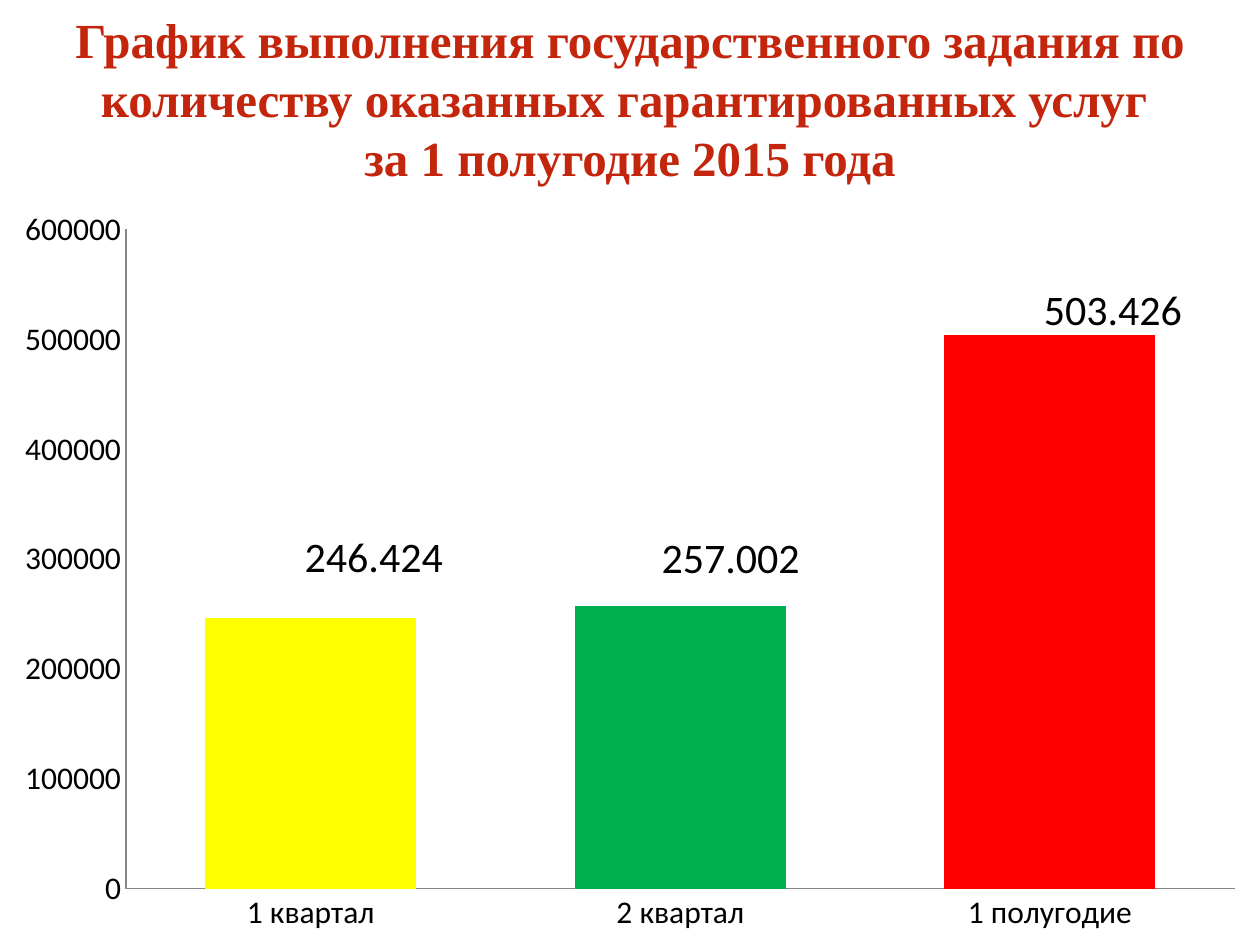
from dataclasses import dataclass

from lxml.etree import SubElement
from pptx import Presentation
from pptx.chart.data import CategoryChartData
from pptx.dml.color import RGBColor
from pptx.enum.chart import XL_CHART_TYPE, XL_TICK_MARK
from pptx.enum.text import MSO_ANCHOR, PP_ALIGN
from pptx.oxml.ns import qn
from pptx.util import Pt


@dataclass(frozen=True)
class Theme:
    """Colours, fonts and type sizes of the slide."""
    heading: RGBColor = RGBColor(0xC3, 0x26, 0x0C)
    text: RGBColor = RGBColor(0, 0, 0)
    axis: RGBColor = RGBColor(0x86, 0x86, 0x86)
    yellow: RGBColor = RGBColor(0xFF, 0xFF, 0)
    green: RGBColor = RGBColor(0, 0xB0, 0x50)
    red: RGBColor = RGBColor(0xFF, 0, 0)
    heading_font: str = "Times New Roman"
    chart_font: str = "Calibri"
    heading_size: Pt = Pt(28)
    axis_size: Pt = Pt(18)
    value_size: Pt = Pt(24)


THEME = Theme()
WIDTH, HEIGHT, HEADING_HEIGHT = 720, 540, 111.6
HEADING = ("График выполнения государственного задания по количеству "
           "оказанных гарантированных услуг \vза 1 полугодие 2015 года")
PERIODS = [
    ("1 квартал", 246424, "246.424", THEME.yellow, (0.05, -0.26)),
    ("2 квартал", 257002, "257.002", THEME.green, (0.04, -0.25)),
    ("1 полугодие", 503426, "503.426", THEME.red, (0.05, -0.4)),
]


def add_heading(slide):
    """Add the centred heading across the top."""
    frame = slide.shapes.add_textbox(0, 0, Pt(WIDTH), Pt(HEADING_HEIGHT)).text_frame
    frame.word_wrap = True
    frame.vertical_anchor = MSO_ANCHOR.MIDDLE
    paragraph = frame.paragraphs[0]
    paragraph.text = HEADING
    paragraph.alignment = PP_ALIGN.CENTER
    font = paragraph.font
    font.name, font.size, font.bold = THEME.heading_font, THEME.heading_size, True
    font.color.rgb = THEME.heading


def add_manual_layout(layout, **settings):
    """Fill a chart layout element with manual settings."""
    manual = SubElement(layout, qn("c:manualLayout"))
    for name, value in settings.items():
        SubElement(manual, qn(f"c:{name}")).set("val", str(value))


def place_plot(chart):
    """Fix the inner plot area within the chart."""
    plot_area = chart.plots[0]._element.getparent()
    layout = plot_area.find(qn("c:layout"))
    if layout is None:
        layout = SubElement(plot_area, qn("c:layout"))
        plot_area.insert(0, layout)
    add_manual_layout(layout, layoutTarget="inner", xMode="edge", yMode="edge",
                      x=0.1, y=0.045, w=0.88, h=0.88)


def style_axis(axis):
    """Give an axis a grey line without ticks or gridlines."""
    axis.has_major_gridlines = False
    axis.major_tick_mark = axis.minor_tick_mark = XL_TICK_MARK.NONE
    axis.format.line.color.rgb = THEME.axis
    axis.format.line.width = Pt(0.75)


def style_column(point, label, color, offset):
    """Colour one column and place its value label."""
    point.format.fill.solid()
    point.format.fill.fore_color.rgb = color
    paragraph = point.data_label.text_frame.paragraphs[0]
    paragraph.text = label
    font = paragraph.font
    font.name, font.size = THEME.chart_font, THEME.value_size
    font.color.rgb = THEME.text
    label_element = point.data_label._dLbl
    layout = SubElement(label_element, qn("c:layout"))
    label_element.insert(1, layout)
    add_manual_layout(layout, x=offset[0], y=offset[1])


def show_values(series):
    """Show value labels without leader lines."""
    labels = series.data_labels
    labels.show_value = True
    for leader_lines in labels._element.findall(qn("c:showLeaderLines")):
        leader_lines.set("val", "0")


def add_column_chart(slide):
    """Add the chart of services by period."""
    data = CategoryChartData()
    data.categories = [period[0] for period in PERIODS]
    data.add_series("Series 1", [period[1] for period in PERIODS])
    chart = slide.shapes.add_chart(
        XL_CHART_TYPE.COLUMN_STACKED, 0, Pt(HEADING_HEIGHT),
        Pt(WIDTH), Pt(HEIGHT - HEADING_HEIGHT), data).chart
    chart.has_legend = chart.has_title = False
    chart.font.name, chart.font.size = THEME.chart_font, THEME.axis_size
    chart.font.color.rgb = THEME.text
    style_axis(chart.category_axis)
    style_axis(chart.value_axis)
    chart.value_axis.minimum_scale, chart.value_axis.maximum_scale = 0, 600000
    chart.value_axis.major_unit = 100000
    plot = chart.plots[0]
    plot.gap_width, plot.overlap, plot.vary_by_categories = 75, 100, False
    place_plot(chart)
    services = plot.series[0]
    services.format.fill.solid()
    services.format.fill.fore_color.rgb = THEME.red
    show_values(services)
    for index, (_, _, label, color, offset) in enumerate(PERIODS):
        style_column(services.points[index], label, color, offset)


def main():
    """Build and save the slide."""
    presentation = Presentation()
    presentation.slide_width, presentation.slide_height = Pt(WIDTH), Pt(HEIGHT)
    slide = presentation.slides.add_slide(presentation.slide_layouts[6])
    add_heading(slide)
    add_column_chart(slide)
    presentation.save("out.pptx")


if __name__ == "__main__":
    main()
